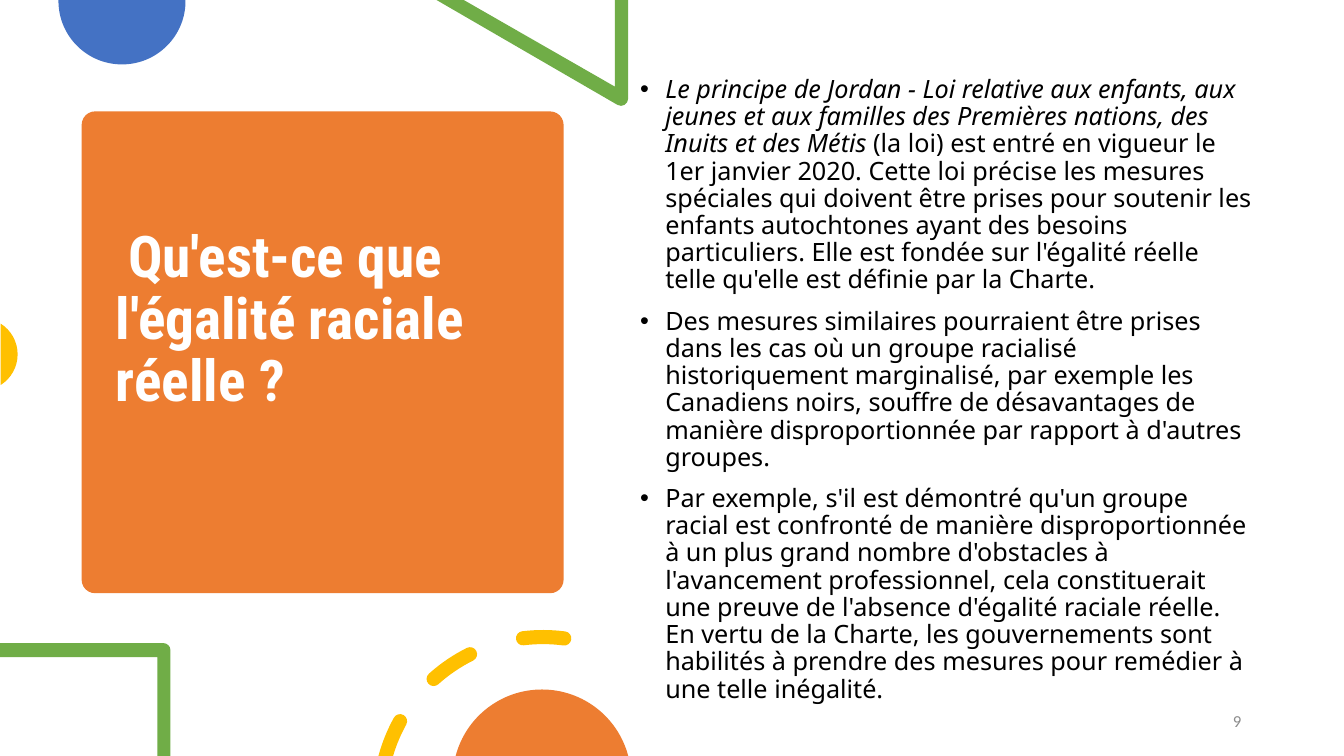
from dataclasses import dataclass
from math import asin, ceil, cos, degrees, radians, sin, tan

from pptx import Presentation
from pptx.dml.color import RGBColor as RGB
from pptx.enum.shapes import MSO_SHAPE as Kind
from pptx.enum.text import MSO_ANCHOR as Anchor, PP_ALIGN as Align
from pptx.oxml.xmlchemy import OxmlElement as Node
from pptx.util import Inches, Pt

# The slide is a grid of square cells, 133.3 columns by 75 rows.
CELL = Inches(0.1)
COLS, ROWS = 133.3, 75
HUES = {
    "blue": "4472C4", "green": "70AD47", "gold": "FFC000", "orange": "ED7D31",
    "white": "FFFFFF", "black": "000000", "gray": "8C8C8C",
}
Point = tuple[float, float]
Ring = list[list[Point]]  # a step of one point is a line, of three a curve


@dataclass
class Box:
    col: float
    row: float
    wide: float
    high: float

    def emu(self) -> list[int]:
        return [cells(n) for n in (self.col, self.row, self.wide, self.high)]


@dataclass
class Outline:
    hue: str
    rings: list[Ring]


@dataclass
class Run:
    text: str
    italic: bool = False


def cells(count: float) -> int:
    return round(count * CELL)


def lines(*points: Point) -> Ring:
    return [[point] for point in points]


def arc(mid: Point, radius: float, start: float, end: float) -> Ring:
    """A line to the arc's start, then curves; degrees run anticlockwise."""
    def spot(turn: float, pull: float = 0) -> Point:
        return (mid[0] + radius * (cos(turn) - pull * sin(turn)),
                mid[1] - radius * (sin(turn) + pull * cos(turn)))

    count = ceil(abs(end - start) / 92)
    step = radians(end - start) / count
    pull = 4 / 3 * tan(step / 4)
    turns = [radians(start) + step * i for i in range(count)]
    return [[spot(turns[0])]] + [
        [spot(t, pull), spot(t + step, -pull), spot(t + step)] for t in turns]


def dash(start: float, end: float = 0) -> Ring:
    """One round-ended dash of the gold ring; without an end, it runs off the slide."""
    mid, radius, half = (53.85, 79.4), 16.2, 0.7
    inner, outer = radius - half, radius + half

    def cap(turn: float, side: float) -> Ring:
        hub = arc(mid, radius, turn, turn + 1)[0][0]
        return arc(hub, half, turn + side, turn + side + 180)[1:]

    def edge(size: float) -> float:
        return end or 180 - degrees(asin((mid[1] - ROWS) / size))

    return (arc(mid, outer, start, edge(outer)) + (cap(end, 0) if end else [])
            + arc(mid, inner, edge(inner), start) + cap(start, 180))


def paint(shape, hue: str) -> None:
    shape.shadow.inherit = False
    shape.fill.solid()
    shape.fill.fore_color.rgb = RGB.from_string(HUES[hue])
    shape.line.fill.background()


def bend(shape, rings: list[Ring]) -> None:
    """Join each three line nodes that stand for a curve into one curve node."""
    track = shape._element.xpath(".//a:path")[0]
    nodes = iter(list(track))
    for ring in rings:
        next(nodes)
        for step in ring[1:]:
            group = [next(nodes) for _ in step]
            if len(group) == 3:
                curve = Node("a:cubicBezTo")
                group[0].addprevious(curve)
                for node in group:
                    curve.append(node[0])
                    track.remove(node)
        next(nodes)


def draw(slide, item: Outline) -> None:
    pen = None
    for ring in item.rings:
        first, *rest = [(cells(x), cells(y)) for step in ring for x, y in step]
        if pen is None:
            pen = slide.shapes.build_freeform(*first, scale=1.0)
        else:
            pen.move_to(*first)
        pen.add_line_segments(rest, close=True)
    shape = pen.convert_to_shape()
    bend(shape, item.rings)
    paint(shape, item.hue)


def write(shape, paras: list[list[Run]], *, font: str, size: float, hue: str,
          bold: bool = False, align=Align.LEFT, anchor=Anchor.TOP,
          line: float = 1.0, after: float = 0, top: float = 0.5,
          base: float = 0.5, left: float = 0, first: float = 0,
          bullet: bool = False) -> None:
    """Fill a shape with text; insets and indents are in cells."""
    frame = shape.text_frame
    frame.word_wrap = True
    frame.vertical_anchor = anchor
    frame.margin_left = frame.margin_right = cells(1)
    frame.margin_top, frame.margin_bottom = cells(top), cells(base)
    for i, runs in enumerate(paras):
        para = frame.add_paragraph() if i else frame.paragraphs[0]
        para.alignment, para.line_spacing = align, line
        para.space_before, para.space_after = Pt(0), Pt(after)
        props = para._p.get_or_add_pPr()
        props.set("marL", str(cells(left)))
        props.set("indent", str(cells(first)))
        if bullet:
            face, mark = Node("a:buFont"), Node("a:buChar")
            face.set("typeface", "Arial")
            mark.set("char", "•")
            props.extend([face, mark])
        for part in runs:
            run = para.add_run()
            run.text = part.text
            run.font.name, run.font.size = font, Pt(size)
            run.font.bold, run.font.italic = bold, part.italic
            run.font.color.rgb = RGB.from_string(HUES[hue])


DECOR = [
    Outline("blue", [arc((12.1, 0.1), 6.3, 179, 361)]),
    Outline("green", [lines((62.3, 0), (61, 0), (61, 8.6), (46, 0), (43.3, 0))
                      + arc((61.6, 9.8), 0.7, 240, 360)]),
    Outline("gold", [arc((-1.85, 35.15), 3.6, -58, 58)]),
    Outline("green", [lines((0, 63.8), (0, 65.2), (15.6, 65.2), (15.6, ROWS), (16.9, ROWS))
                      + arc((16.2, 64.5), 0.7, 0, 90)]),
    Outline("gold", [dash(82.5, 97), dash(116.5, 132), dash(151)]),
    Outline("orange", [arc((53.75, 77.25), 8.85, 14.7, 165.3)]),
]
POINTS = [
    [Run("Le principe de Jordan - Loi relative aux enfants, aux jeunes et aux familles "
         "des Premières nations, des Inuits et des Métis ", italic=True),
     Run("(la loi) est entré en vigueur le 1er janvier 2020. Cette loi précise les "
         "mesures spéciales qui doivent être prises pour soutenir les enfants "
         "autochtones ayant des besoins particuliers. Elle est fondée sur l'égalité "
         "réelle telle qu'elle est définie par la Charte.")],
    [Run("Des mesures similaires pourraient être prises dans les cas où un groupe "
         "racialisé historiquement marginalisé, par exemple les Canadiens noirs, "
         "souffre de désavantages de manière disproportionnée par rapport à d'autres "
         "groupes.")],
    [Run("Par exemple, s'il est démontré qu'un groupe racial est confronté de manière "
         "disproportionnée à un plus grand nombre d'obstacles à l'avancement "
         "professionnel, cela constituerait une preuve de l'absence d'égalité raciale "
         "réelle. En vertu de la Charte, les gouvernements sont habilités à prendre "
         "des mesures pour remédier à une telle inégalité.")],
]


def main() -> None:
    deck = Presentation()
    deck.slide_width, deck.slide_height = cells(COLS), cells(ROWS)
    slide = deck.slides.add_slide(deck.slide_layouts[5])
    shapes = slide.shapes

    card = shapes.add_shape(Kind.ROUNDED_RECTANGLE, *Box(8.1, 11.05, 47.8, 47.8).emu())
    card.adjustments[0] = 0.028
    paint(card, "orange")

    title = shapes.title
    card._element.addnext(title._element)
    title.left, title.top, title.width, title.height = Box(10.5, 12.1, 43.1, 45.6).emu()
    write(title, [[Run("Qu'est-ce que l'égalité raciale réelle ?")]],
          font="Roboto Condensed", size=41, hue="white", bold=True,
          anchor=Anchor.MIDDLE, line=0.9, base=6.7, first=1.2)

    for item in DECOR:
        draw(slide, item)

    body = shapes.add_textbox(*Box(62.5, 3.3, 62.9, 65.4).emu())
    write(body, POINTS, font="Noto Sans", size=18, hue="black", line=0.9,
          after=10, top=4.3, left=2.5, first=-2.5, bullet=True)

    page = shapes.add_textbox(*Box(114.8, 69.5, 9.3, 4).emu())
    write(page, [[Run("9")]], font="Calibri", size=12, hue="gray",
          align=Align.RIGHT, anchor=Anchor.MIDDLE, after=6)

    deck.save("out.pptx")


if __name__ == "__main__":
    main()
